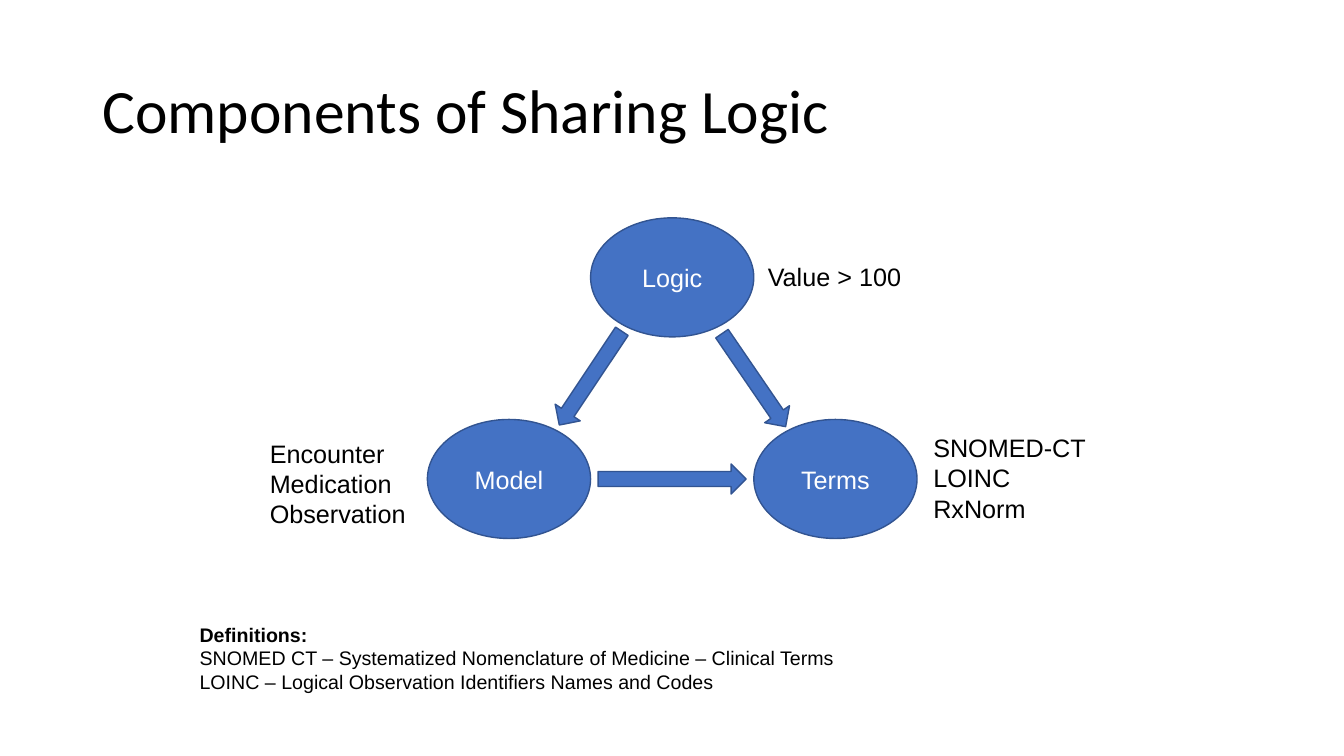
from dataclasses import dataclass

from pptx import Presentation
from pptx.dml.color import RGBColor as Rgb
from pptx.enum import shapes as es, text as et
from pptx.util import Cm, Pt


@dataclass(frozen=True)
class Theme:
    ink: str = "000000"
    light: str = "FFFFFF"
    fill: str = "4472C4"
    edge: str = "325491"
    head: str = "Calibri"
    body: str = "Arial"
    title: int = 44
    label: int = 18
    note: int = 14


T = Theme()


def write(frame, lines, size=T.label, font=T.body, color=T.ink, bold=(),
          align=et.PP_ALIGN.LEFT, anchor=et.MSO_ANCHOR.TOP, space=1.0):
    """Fill the frame, one paragraph per line; bold holds line indexes."""
    frame.vertical_anchor = anchor
    for i, line in enumerate(lines):
        para = frame.paragraphs[0] if i == 0 else frame.add_paragraph()
        para.alignment, para.line_spacing = align, space
        run = para.add_run()
        run.text = line
        run.font.size, run.font.name = Pt(size), font
        run.font.bold = i in bold
        run.font.color.rgb = Rgb.from_string(color)


def place(box):
    return [Cm(v) for v in box]


def title(slide, box, words):
    head = slide.shapes.title
    head.left, head.top, head.width, head.height = place(box)
    write(head.text_frame, [words], size=T.title, font=T.head,
          anchor=et.MSO_ANCHOR.MIDDLE, space=0.9)


def note(slide, box, lines, wrap=True, **form):
    frame = slide.shapes.add_textbox(*place(box)).text_frame
    frame.word_wrap = wrap
    frame.auto_size = et.MSO_AUTO_SIZE.SHAPE_TO_FIT_TEXT
    write(frame, lines, **form)


def solid(group, kind, box):
    shape = group.shapes.add_shape(kind, *place(box))
    shape.shadow.inherit = False
    shape.fill.solid()
    shape.fill.fore_color.rgb = Rgb.from_string(T.fill)
    shape.line.color.rgb = Rgb.from_string(T.edge)
    shape.line.width = Pt(1)
    return shape


def node(group, box, name):
    oval = solid(group, es.MSO_SHAPE.OVAL, box)
    write(oval.text_frame, [name], color=T.light,
          align=et.PP_ALIGN.CENTER, anchor=et.MSO_ANCHOR.MIDDLE)


def arrow(group, x, y, size, turn):
    """Centre a down arrow on x, y and turn it clockwise by degrees."""
    thick = 0.76
    box = (x - thick / 2, y - size / 2, thick, size)
    solid(group, es.MSO_SHAPE.DOWN_ARROW, box).rotation = turn


def triad(slide, box):
    """Three ovals in a triangle, joined by arrows."""
    left, top, wide, high = box
    w, h = wide / 3, 3
    base = top + high - h
    group = slide.shapes.add_group_shape()
    for name, x, y in (("Logic", left + w, top),
                       ("Model", left, base),
                       ("Terms", left + 2 * w, base)):
        node(group, (x, y, w, h), name)
    arrow(group, left + w, top + high / 2, 2.84, 33.7)
    arrow(group, left + 2 * w, top + high / 2 + 0.05, 2.84, 325.6)
    arrow(group, left + wide / 2, base + h / 2, 3.73, 270)


def main():
    deck = Presentation()
    deck.slide_width, deck.slide_height = Cm(33.87), Cm(19.05)
    slide = deck.slides.add_slide(deck.slide_layouts[5])
    title(slide, (2.33, 1.01, 29.21, 3.68), "Components of Sharing Logic")
    note(slide, (19.1, 6.45, 4.29, 1.03), ["Value > 100"])
    note(slide, (23.27, 10.77, 5.87, 2.57), ["SNOMED-CT", "LOINC", "RxNorm"])
    note(slide, (6.55, 10.92, 4.57, 2.57),
         ["Encounter", "Medication", "Observation"])
    triad(slide, (10.77, 5.49, 12.34, 8.08))
    note(slide, (4.78, 15.57, 16.59, 2.06), [
        "Definitions:",
        "SNOMED CT – Systematized Nomenclature of Medicine – Clinical Terms",
        "LOINC – Logical Observation Identifiers Names and Codes",
    ], wrap=False, size=T.note, bold=(0,))
    deck.save("out.pptx")


if __name__ == "__main__":
    main()
